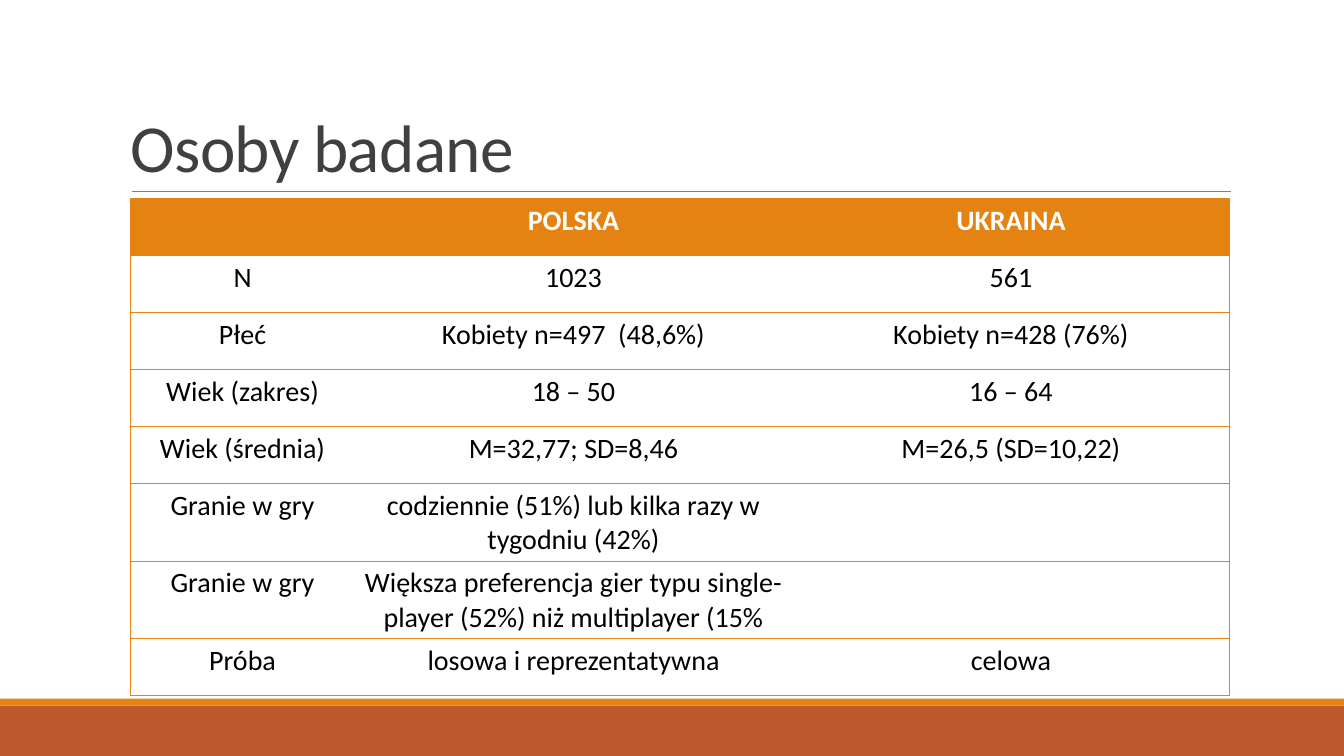
from lxml.etree import SubElement
from pptx import Presentation
from pptx.dml.color import RGBColor
from pptx.enum.shapes import MSO_CONNECTOR as Connector, MSO_SHAPE as Shape
from pptx.enum.text import MSO_ANCHOR as Anchor, PP_ALIGN as Align
from pptx.oxml.ns import qn
from pptx.util import Inches, Pt

ORANGE = RGBColor(0xE4, 0x83, 0x12)
RUST = RGBColor(0xBD, 0x58, 0x2C)
GREY = RGBColor(0x80, 0x80, 0x80)
CHARCOAL = RGBColor(0x40, 0x40, 0x40)
WHITE = RGBColor(0xFF, 0xFF, 0xFF)
BLACK = RGBColor(0x00, 0x00, 0x00)

SURVEY = [
    ("", "POLSKA", "UKRAINA"),
    ("N", "1023", "561"),
    ("Płeć", "Kobiety n=497  (48,6%)", "Kobiety n=428 (76%)"),
    ("Wiek (zakres)", "18 – 50", "16 – 64"),
    ("Wiek (średnia)", "M=32,77; SD=8,46", "M=26,5 (SD=10,22)"),
    ("Granie w gry", "codziennie (51%) lub kilka razy w tygodniu (42%)", ""),
    ("Granie w gry", "Większa preferencja gier typu single-player (52%) niż multiplayer (15%", ""),
    ("Próba", "losowa i reprezentatywna", "celowa"),
]


def write(frame, text, size=20, color=BLACK, bold=False, align=Align.CENTER,
          line_spacing=None, tracking=None):
    paragraph = frame.paragraphs[0]
    paragraph.alignment = align
    paragraph.line_spacing = line_spacing
    paragraph.font.size = Pt(size)
    if not text:
        return
    run = paragraph.add_run()
    run.text = text
    run.font.name = "Calibri"
    run.font.size = Pt(size)
    run.font.bold = bold
    run.font.color.rgb = color
    if tracking is not None:
        run.font._element.set("spc", str(int(tracking * 100)))


def set_border(cell, side, color):
    edge = SubElement(cell._tc.get_or_add_tcPr(), qn(f"a:{side}"), w=str(Pt(1)))
    if color is None:
        SubElement(edge, qn("a:noFill"))
    else:
        fill = SubElement(edge, qn("a:solidFill"))
        SubElement(fill, qn("a:srgbClr"), val=str(color))


class SlideBuilder:
    def __init__(self, deck):
        self.slide = deck.slides.add_slide(deck.slide_layouts[6])
        self.shapes = self.slide.shapes
        self.width, self.height = deck.slide_width, deck.slide_height

    def x(self, percent):
        return round(self.width * percent / 100)

    def y(self, percent):
        return round(self.height * percent / 100)

    def area(self, left, top, width, height):
        return self.x(left), self.y(top), self.x(width), self.y(height)

    def bar(self, top, height, color):
        band = self.shapes.add_shape(Shape.RECTANGLE, *self.area(0, top, 100, height))
        band.shadow.inherit = False
        band.fill.solid()
        band.fill.fore_color.rgb = color
        band.line.fill.background()

    def rule(self, left, right, level):
        rule = self.shapes.add_connector(Connector.STRAIGHT, self.x(left), self.y(level),
                                         self.x(right), self.y(level))
        rule.line.color.rgb = GREY
        rule.line.width = Pt(0.5)
        SubElement(rule._element.spPr, qn("a:effectLst"))

    def title(self, text, *place):
        frame = self.shapes.add_textbox(*self.area(*place)).text_frame
        frame.word_wrap = True
        frame.vertical_anchor = Anchor.BOTTOM
        write(frame, text, size=48, color=CHARCOAL, align=Align.LEFT,
              line_spacing=0.85, tracking=-0.5)

    def table(self, rows, left, top, column_widths, row_height):
        place = self.area(left, top, sum(column_widths), row_height * len(rows))
        table = self.shapes.add_table(len(rows), len(column_widths), *place).table
        table.first_row = table.horz_banding = False
        for column, share in zip(table.columns, column_widths):
            column.width = self.x(share)
        last = len(column_widths) - 1
        for r, entries in enumerate(rows):
            table.rows[r].height = self.y(row_height)
            header = r == 0
            for c, entry in enumerate(entries):
                cell = table.cell(r, c)
                write(cell.text_frame, entry, color=WHITE if header else BLACK, bold=header)
                set_border(cell, "lnL", ORANGE if c == 0 else None)
                set_border(cell, "lnR", ORANGE if c == last else None)
                set_border(cell, "lnT", ORANGE)
                set_border(cell, "lnB", ORANGE)
                if header:
                    cell.fill.solid()
                    cell.fill.fore_color.rgb = ORANGE
                else:
                    cell.fill.background()


def main():
    deck = Presentation()
    deck.slide_width, deck.slide_height = Inches(13.33), Inches(7.5)
    page = SlideBuilder(deck)
    page.bar(93.33, 6.67, RUST)
    page.bar(92.4, 0.93, ORANGE)
    page.rule(9.83, 91.6, 25.33)
    page.title("Osoby badane", 9, 4.13, 82.5, 21.2)
    page.table(SURVEY, 9.7, 26.25, (16.7, 32.55, 32.55), 7.55)
    deck.save("out.pptx")


if __name__ == "__main__":
    main()
